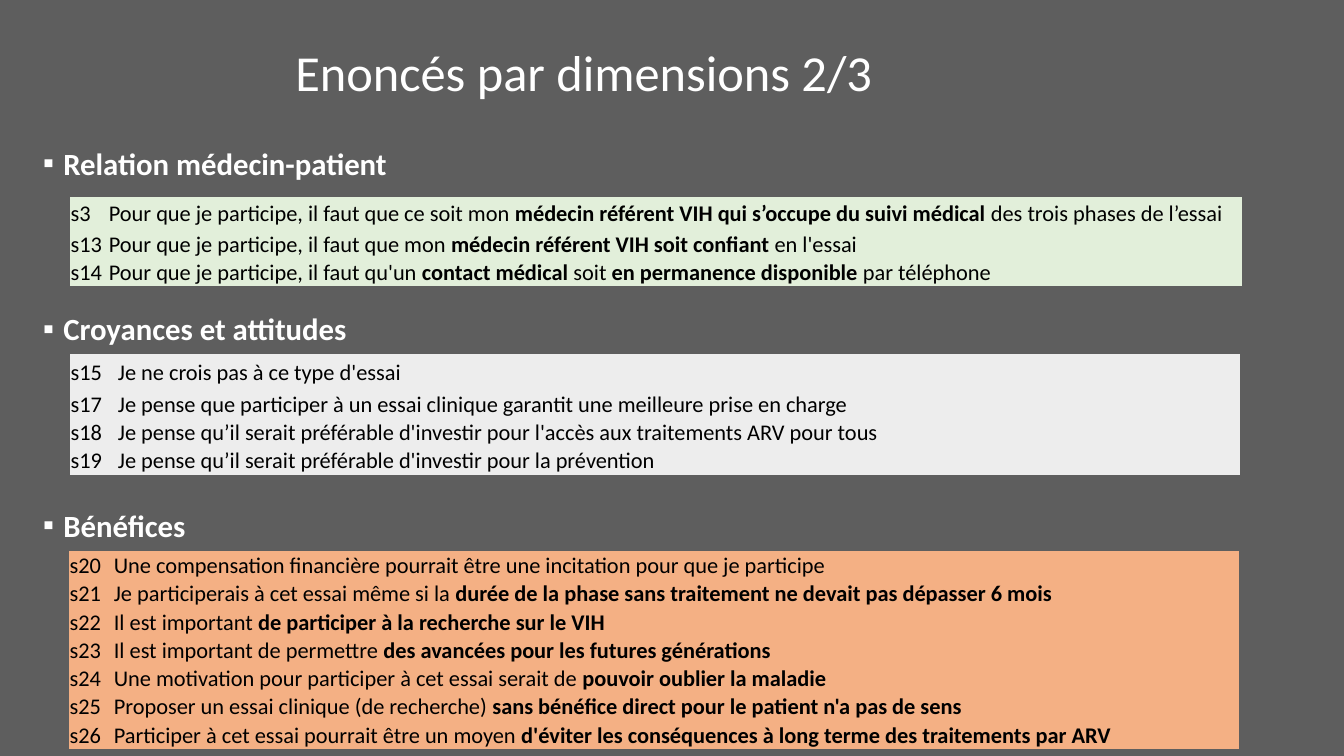
from lxml.etree import SubElement
from pptx import Presentation
from pptx.dml.color import RGBColor
from pptx.enum.text import MSO_ANCHOR
from pptx.oxml.ns import qn
from pptx.util import Inches, Pt

FONT = "Calibri"
COLORS = {
    "background": "5E5E5E",
    "light": "FFFFFF",
    "dark": "000000",
    "relation": "E2EFDA",
    "beliefs": "EDEDED",
    "benefits": "F4B084",
}
NO_TABLE_STYLE = "{2D5ABB26-0587-4C30-8999-92F81FD0307C}"
ROW_HEIGHT = 0.28
CELL_MARGIN = Inches(0.01)

# Asterisks enclose the bold parts of a statement.
RELATION = [
    ("s3", "Pour que je participe, il faut que ce soit mon *médecin référent VIH "
           "qui s’occupe du suivi médical *des trois phases de l’essai"),
    ("s13", "Pour que je participe, il faut que mon *médecin référent VIH soit confiant *en l'essai"),
    ("s14", "Pour que je participe, il faut qu'un *contact médical *soit"
            "* en permanence disponible *par téléphone"),
]
BELIEFS = [
    ("s15", "Je ne crois pas à ce type d'essai"),
    ("s17", "Je pense que participer à un essai clinique garantit une meilleure prise en charge"),
    ("s18", "Je pense qu’il serait préférable d'investir pour l'accès aux traitements ARV pour tous"),
    ("s19", "Je pense qu’il serait préférable d'investir pour la prévention"),
]
BENEFITS = [
    ("s20", "Une compensation financière pourrait être une incitation pour que je participe"),
    ("s21", "Je participerais à cet essai même si la *durée de la phase sans traitement "
            "ne devait pas dépasser 6 mois"),
    ("s22", "Il est important *de participer à la recherche sur le VIH"),
    ("s23", "Il est important de permettre *des avancées pour les futures générations"),
    ("s24", "Une motivation pour participer à cet essai serait de *pouvoir oublier la maladie"),
    ("s25", "Proposer un essai clinique (de recherche) *sans bénéfice direct pour le patient "
            "n'a pas de sens"),
    ("s26", "Participer à cet essai pourrait être un moyen *d'éviter les conséquences "
            "à long terme des traitements par ARV"),
]


def rgb(name):
    return RGBColor.from_string(COLORS[name])


def style_font(font, size, color, bold=False):
    font.name = FONT
    font.size = Pt(size)
    font.bold = bold
    font.color.rgb = rgb(color)


def add_line(slide, text, left, top, width, height, size, bold=False):
    """Add a one-line text box and return its paragraph."""
    box = slide.shapes.add_textbox(Inches(left), Inches(top), Inches(width), Inches(height))
    frame = box.text_frame
    frame.word_wrap = True
    frame.vertical_anchor = MSO_ANCHOR.MIDDLE
    frame.text = text
    line = frame.paragraphs[0]
    style_font(line.runs[0].font, size, "light", bold)
    return line


def add_heading(slide, text, top):
    heading = add_line(slide, text, 0.33, top, 11.51, 0.4, 22, bold=True)
    heading.line_spacing = 0.9
    props = heading._p.get_or_add_pPr()
    props.set("marL", str(Inches(0.2)))
    props.set("indent", str(-Inches(0.2)))
    bullet_color = SubElement(props, qn("a:buClr"))
    SubElement(bullet_color, qn("a:srgbClr"), val=COLORS["light"])
    SubElement(props, qn("a:buFont"), typeface=FONT)
    SubElement(props, qn("a:buChar"), char="▪")


def fill_cell(cell, text, fill):
    cell.fill.solid()
    cell.fill.fore_color.rgb = rgb(fill)
    cell.vertical_anchor = MSO_ANCHOR.MIDDLE
    cell.margin_left = cell.margin_right = cell.margin_top = CELL_MARGIN
    cell.margin_bottom = 0
    line = cell.text_frame.paragraphs[0]
    for index, part in enumerate(text.split("*")):
        run = line.add_run()
        run.text = part
        style_font(run.font, 16, "dark", bold=index % 2 == 1)


def add_statements(slide, statements, left, top, widths, first_height, fill):
    heights = [first_height] + [ROW_HEIGHT] * (len(statements) - 1)
    table = slide.shapes.add_table(
        len(statements), 2, Inches(left), Inches(top),
        Inches(sum(widths)), Inches(sum(heights))).table
    table.first_row = table.horz_banding = False
    table._tbl.tblPr.find(qn("a:tableStyleId")).text = NO_TABLE_STYLE
    for column, width in zip(table.columns, widths):
        column.width = Inches(width)
    for row, height, statement in zip(table.rows, heights, statements):
        row.height = Inches(height)
        for cell, text in zip(row.cells, statement):
            fill_cell(cell, text, fill)


def main():
    deck = Presentation()
    deck.slide_width, deck.slide_height = Inches(13.33), Inches(7.5)
    slide = deck.slides.add_slide(deck.slide_layouts[6])
    slide.background.fill.solid()
    slide.background.fill.fore_color.rgb = rgb("background")

    add_line(slide, "Enoncés par dimensions 2/3", 2.83, 0.33, 9.75, 0.75, 36)
    add_heading(slide, "Relation médecin-patient", 1.44)
    add_statements(slide, RELATION, 0.69, 1.95, (0.38, 11.25), 0.33, "relation")
    add_heading(slide, "Croyances et attitudes", 3.08)
    add_statements(slide, BELIEFS, 0.69, 3.51, (0.47, 11.14), 0.36, "beliefs")
    add_heading(slide, "Bénéfices", 5.03)
    add_statements(slide, BENEFITS, 0.68, 5.47, (0.44, 11.17), ROW_HEIGHT, "benefits")
    deck.save("out.pptx")


if __name__ == "__main__":
    main()
